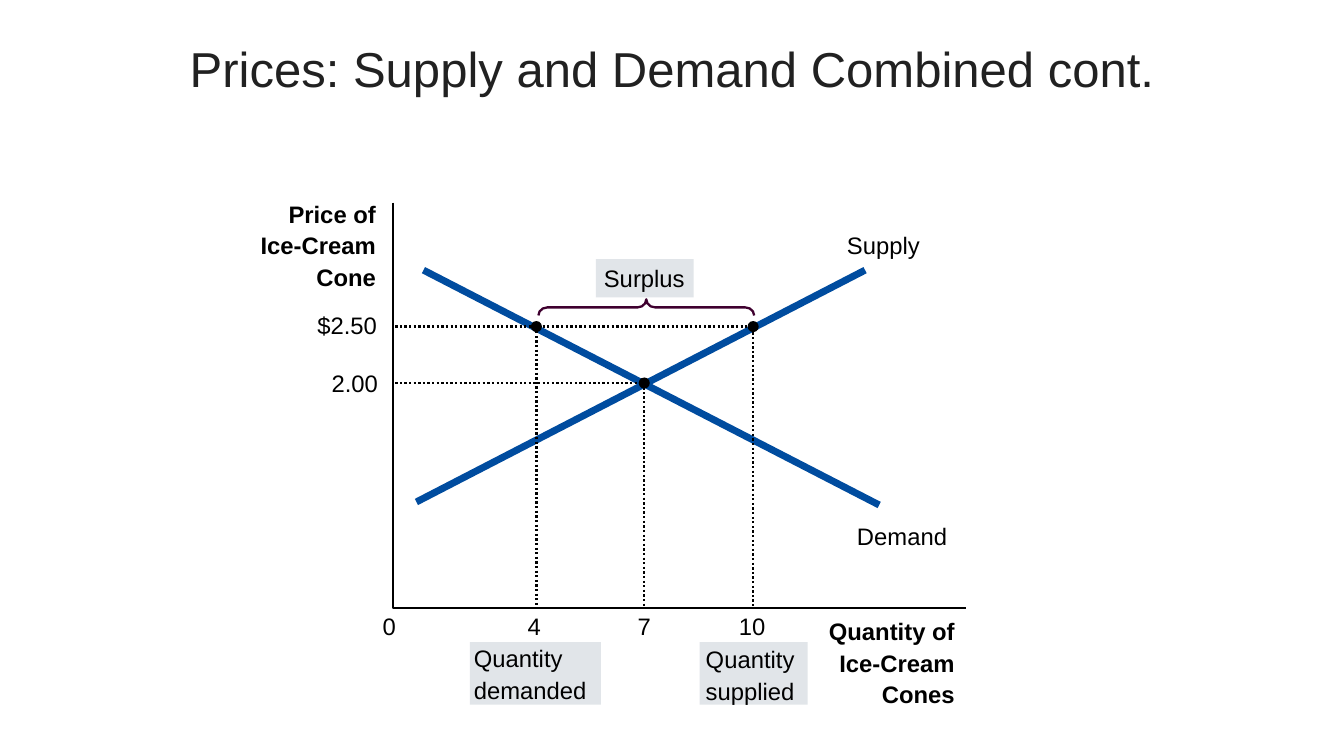
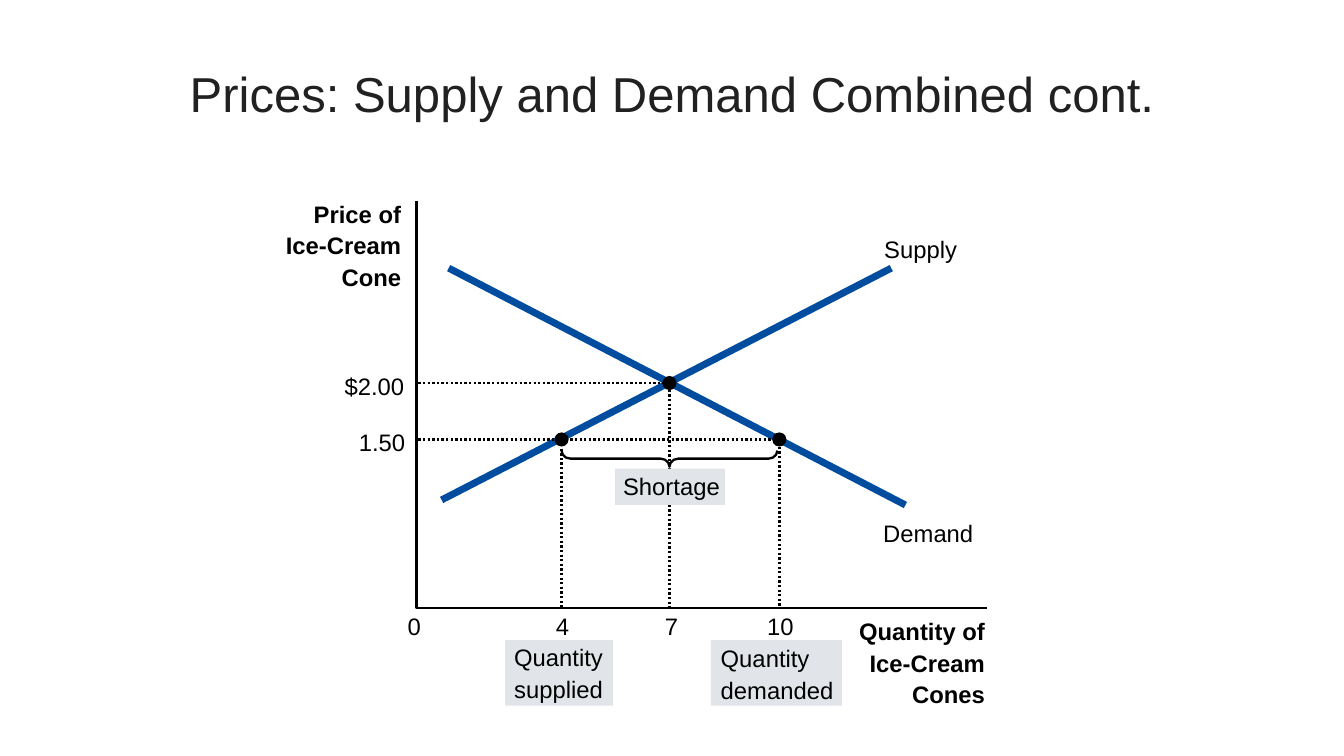
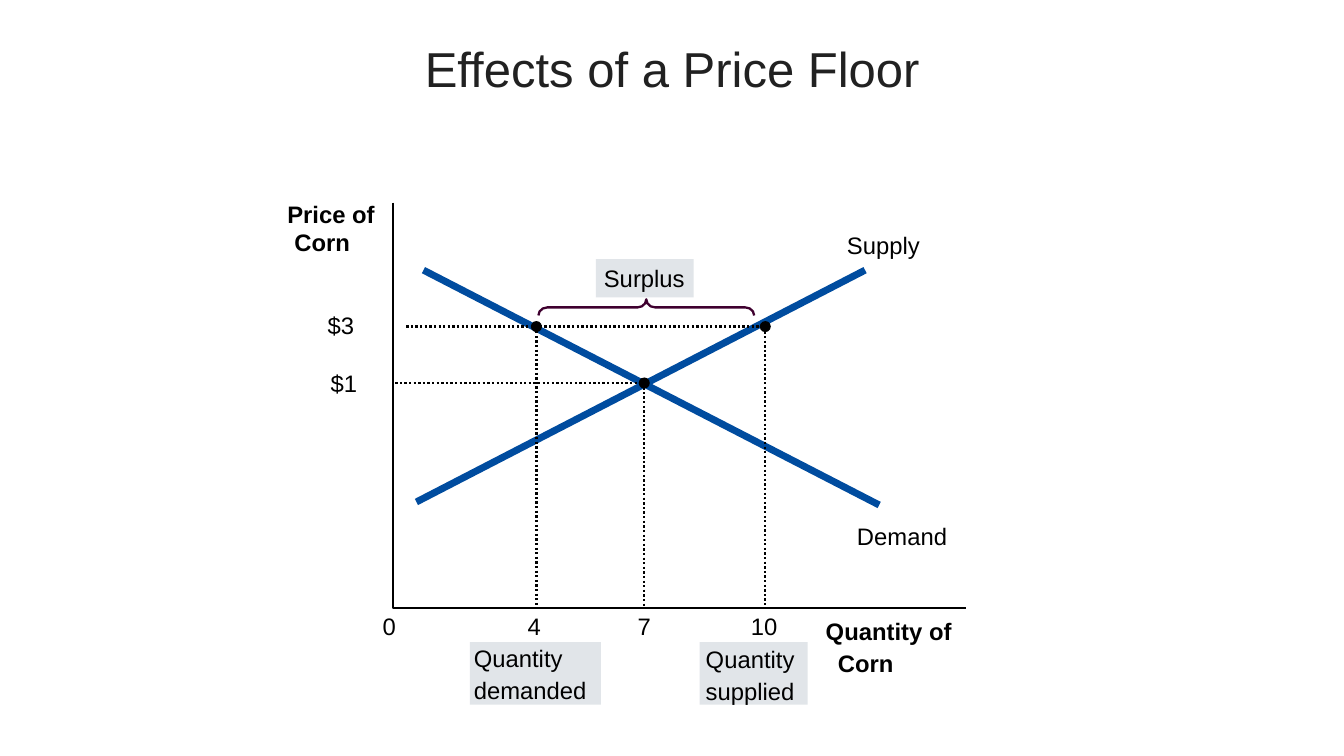
from dataclasses import dataclass, replace

from lxml.etree import SubElement
from pptx import Presentation
from pptx.dml.color import RGBColor
from pptx.enum.dml import MSO_LINE
from pptx.enum.shapes import MSO_CONNECTOR, MSO_SHAPE
from pptx.enum.text import MSO_ANCHOR, MSO_AUTO_SIZE, PP_ALIGN
from pptx.oxml.ns import qn
from pptx.slide import Slide
from pptx.util import Inches, Pt

COLORS = {
    "ink": "000000",
    "title": "212121",
    "curve": "004C9F",
    "callout": "E1E5E9",
    "surplus": "3F002F",
}
FONT = "Arial"
THIN, THICK = 1.63, 5
LINE_HEIGHT = 0.29
QUANTITY_TOP = 6.07
AXIS_BOTTOM = 6.03

Point = tuple[float, float]


@dataclass(frozen=True)
class Label:
    """Lines of text; x is the left, centre or right edge, as align says."""
    lines: tuple[str, ...]
    x: float
    top: float
    align: PP_ALIGN = PP_ALIGN.LEFT
    bold: bool = False
    gap: float = 2
    indent: float = 0


@dataclass(frozen=True)
class Callout:
    lines: tuple[str, ...]
    left: float
    top: float
    width: float
    height: float
    inset: Point


@dataclass(frozen=True)
class Guide:
    """Dotted drop line to the quantity axis, from the price axis if start is given."""
    x: float
    y: float
    start: float | None = None


@dataclass(frozen=True)
class Brace:
    left: float
    top: float
    width: float
    height: float
    rotation: int
    color: str


@dataclass(frozen=True)
class Diagram:
    title: str
    title_top: float
    axis: tuple[Point, Point, Point]
    curves: tuple[tuple[Point, Point], ...]
    curve_labels: tuple[Label, ...]
    axis_labels: tuple[Label, ...]
    price_labels: tuple[Label, ...]
    quantities: tuple[tuple[str, float], ...]
    guides: tuple[Guide, ...]
    dot: float
    brace: Brace
    callouts: tuple[Callout, ...]


def color(name: str) -> RGBColor:
    return RGBColor.from_string(COLORS[name])


def write(frame, lines: tuple[str, ...], *, size: float = 17, bold: bool = False,
          ink: str = "ink", align: PP_ALIGN = PP_ALIGN.LEFT, gap: float = 2,
          indent: float = 0, inset: Point = (0, 0)) -> None:
    """Fill a text frame; gap and indent apply to every line after the first."""
    frame.word_wrap = True
    frame.auto_size = MSO_AUTO_SIZE.NONE
    frame.vertical_anchor = MSO_ANCHOR.TOP
    frame.margin_left, frame.margin_top = map(Inches, inset)
    frame.margin_right = frame.margin_bottom = 0
    for index, line in enumerate(lines):
        paragraph = frame.add_paragraph() if index else frame.paragraphs[0]
        paragraph.alignment = align
        paragraph.space_before = Pt(gap if index else 0)
        if index and indent:
            paragraph._p.get_or_add_pPr().set("marL", str(Inches(indent)))
        run = paragraph.add_run()
        run.text = line
        run.font.name = FONT
        run.font.size = Pt(size)
        run.font.bold = bold
        run.font.color.rgb = color(ink)


def style_line(line, ink: str, width: float, dotted: bool = False) -> None:
    line.color.rgb = color(ink)
    line.width = Pt(width)
    if dotted:
        line.dash_style = MSO_LINE.ROUND_DOT


def add_label(slide: Slide, label: Label) -> None:
    width = 1.6
    shift = {PP_ALIGN.LEFT: 0, PP_ALIGN.CENTER: width / 2, PP_ALIGN.RIGHT: width}
    box = slide.shapes.add_textbox(
        Inches(label.x - shift[label.align]), Inches(label.top),
        Inches(width), Inches(LINE_HEIGHT * len(label.lines)))
    write(box.text_frame, label.lines, bold=label.bold, align=label.align,
          gap=label.gap, indent=label.indent)


def add_path(slide: Slide, points: tuple[Point, ...], ink: str, width: float,
             dotted: bool = False) -> None:
    """Draw a connector through two points, or an open outline through more."""
    corners = [(Inches(x), Inches(y)) for x, y in points]
    if len(corners) == 2:
        path = slide.shapes.add_connector(
            MSO_CONNECTOR.STRAIGHT, *corners[0], *corners[1])
        SubElement(path._element.spPr, qn("a:effectLst"))
    else:
        builder = slide.shapes.build_freeform(*corners[0])
        builder.add_line_segments(corners[1:], close=False)
        path = builder.convert_to_shape()
        path.fill.background()
        path.shadow.inherit = False
    style_line(path.line, ink, width, dotted)


def add_solid(slide: Slide, preset: MSO_SHAPE, left: float, top: float,
              width: float, height: float, fill: str):
    shape = slide.shapes.add_shape(
        preset, Inches(left), Inches(top), Inches(width), Inches(height))
    shape.shadow.inherit = False
    shape.fill.solid()
    shape.fill.fore_color.rgb = color(fill)
    shape.line.fill.background()
    return shape


def add_callout(slide: Slide, callout: Callout) -> None:
    panel = add_solid(slide, MSO_SHAPE.RECTANGLE, callout.left, callout.top,
                      callout.width, callout.height, "callout")
    write(panel.text_frame, callout.lines, inset=callout.inset)


def add_guide(slide: Slide, guide: Guide) -> None:
    points = ((guide.x, guide.y), (guide.x, AXIS_BOTTOM))
    if guide.start is not None:
        points = ((guide.start, guide.y), *points)
    add_path(slide, points, "ink", THIN, dotted=True)


def add_brace(slide: Slide, brace: Brace) -> None:
    """Turn an upright brace on its side about the centre of its final area."""
    center_x = brace.left + brace.width / 2
    center_y = brace.top + brace.height / 2
    shape = slide.shapes.add_shape(
        MSO_SHAPE.LEFT_BRACE,
        Inches(center_x - brace.height / 2), Inches(center_y - brace.width / 2),
        Inches(brace.height), Inches(brace.width))
    shape.rotation = brace.rotation
    shape.adjustments[0] = 0.55
    shape.shadow.inherit = False
    shape.fill.background()
    style_line(shape.line, brace.color, THIN)


def add_title(slide: Slide, text: str, top: float) -> None:
    title = slide.shapes.title
    title.left, title.top = Inches(1.67), Inches(top)
    title.width, title.height = Inches(10), Inches(0.68)
    write(title.text_frame, (text,), size=35, ink="title",
          align=PP_ALIGN.CENTER, inset=(0, 0.05))


def add_diagram(slide: Slide, diagram: Diagram) -> None:
    add_title(slide, diagram.title, diagram.title_top)
    for curve in diagram.curves:
        add_path(slide, curve, "curve", THICK)
    for guide in diagram.guides:
        add_guide(slide, guide)
    add_path(slide, diagram.axis, "ink", THIN)
    for guide in diagram.guides:
        add_solid(slide, MSO_SHAPE.OVAL, guide.x - diagram.dot / 2,
                  guide.y - diagram.dot / 2, diagram.dot, diagram.dot, "ink")
    add_brace(slide, diagram.brace)
    for callout in diagram.callouts:
        add_callout(slide, callout)
    for label in diagram.curve_labels + diagram.axis_labels + diagram.price_labels:
        add_label(slide, label)
    for quantity, x in diagram.quantities:
        add_label(slide, Label((quantity,), x, QUANTITY_TOP, PP_ALIGN.CENTER))


def cone_axis_labels(price_right: float, quantity_right: float) -> tuple[Label, ...]:
    return (
        Label(("Price of", "Ice-Cream", "Cone"), price_right, 1.98, PP_ALIGN.RIGHT, True),
        Label(("Quantity of", "Ice-Cream", "Cones"), quantity_right, 6.12,
              PP_ALIGN.RIGHT, True),
    )


DEMANDED = ("Quantity", "demanded")
SUPPLIED = ("Quantity", "supplied")

SURPLUS = Diagram(
    title="Prices: Supply and Demand Combined cont.",
    title_top=0.33,
    axis=((3.9, 2.01), (3.9, AXIS_BOTTOM), (9.58, AXIS_BOTTOM)),
    curves=(((8.58, 2.68), (4.13, 4.98)), ((4.2, 2.68), (8.72, 5.01))),
    curve_labels=(Label(("Supply",), 8.4, 2.29), Label(("Demand",), 8.5, 5.18)),
    axis_labels=cone_axis_labels(3.73, 9.47),
    price_labels=(Label(("$2.50",), 3.74, 3.08, PP_ALIGN.RIGHT),
                  Label(("2.00",), 3.75, 3.66, PP_ALIGN.RIGHT)),
    quantities=(("0", 3.86), ("4", 5.3), ("7", 6.39), ("10", 7.46)),
    guides=(Guide(7.47, 3.24, 3.92), Guide(6.39, 3.8, 3.92), Guide(5.32, 3.24)),
    dot=0.11,
    brace=Brace(5.34, 2.97, 2.14, 0.16, 90, "surplus"),
    callouts=(
        Callout(DEMANDED, 4.66, 6.37, 1.3, 0.62, (0.04, 0.02)),
        Callout(SUPPLIED, 6.94, 6.37, 1.07, 0.62, (0.06, 0.03)),
        Callout(("Surplus",), 5.91, 2.57, 0.97, 0.38, (0.08, 0.05)),
    ),
)

SHORTAGE = Diagram(
    title=SURPLUS.title,
    title_top=0.58,
    axis=((4.13, 1.99), (4.13, AXIS_BOTTOM), (9.79, AXIS_BOTTOM)),
    curves=(((8.84, 2.66), (4.38, 4.96)), ((4.45, 2.66), (8.98, 5.01))),
    curve_labels=(Label(("Supply",), 8.77, 2.33), Label(("Demand",), 8.76, 5.15)),
    axis_labels=cone_axis_labels(3.98, 9.77),
    price_labels=(Label(("$2.00",), 4.01, 3.69, PP_ALIGN.RIGHT),
                  Label(("1.50",), 4.02, 4.24, PP_ALIGN.RIGHT)),
    quantities=(("0", 4.11), ("4", 5.58), ("7", 6.66), ("10", 7.74)),
    guides=(Guide(7.73, 4.36, 4.15), Guide(6.64, 3.8, 4.15), Guide(5.57, 4.36)),
    dot=0.14,
    brace=Brace(5.57, 4.47, 2.14, 0.16, 270, "ink"),
    callouts=(
        Callout(SUPPLIED, 5.01, 6.35, 1.07, 0.65, (0.09, 0.03)),
        Callout(DEMANDED, 7.05, 6.35, 1.3, 0.65, (0.1, 0.04)),
        Callout(("Shortage",), 6.1, 4.65, 1.09, 0.36, (0.08, 0.03)),
    ),
)

PRICE_FLOOR = replace(
    SURPLUS,
    title="Effects of a Price Floor",
    axis_labels=(
        Label(("Price of", "Corn"), 2.85, 1.98, bold=True, gap=0, indent=0.07),
        Label(("Quantity of", "Corn"), 8.19, 6.12, bold=True, indent=0.12),
    ),
    price_labels=(Label(("$3",), 3.25, 3.08), Label(("$1",), 3.28, 3.66)),
    quantities=(*SURPLUS.quantities[:3], ("10", 7.58)),
    guides=(Guide(7.59, 3.24, 4.03), *SURPLUS.guides[1:]),
)


def main() -> None:
    deck = Presentation()
    deck.slide_width, deck.slide_height = Inches(13.33), Inches(7.5)
    title_only = deck.slide_layouts[5]
    for diagram in (SURPLUS, SHORTAGE, PRICE_FLOOR):
        add_diagram(deck.slides.add_slide(title_only), diagram)
    deck.save("out.pptx")


if __name__ == "__main__":
    main()
